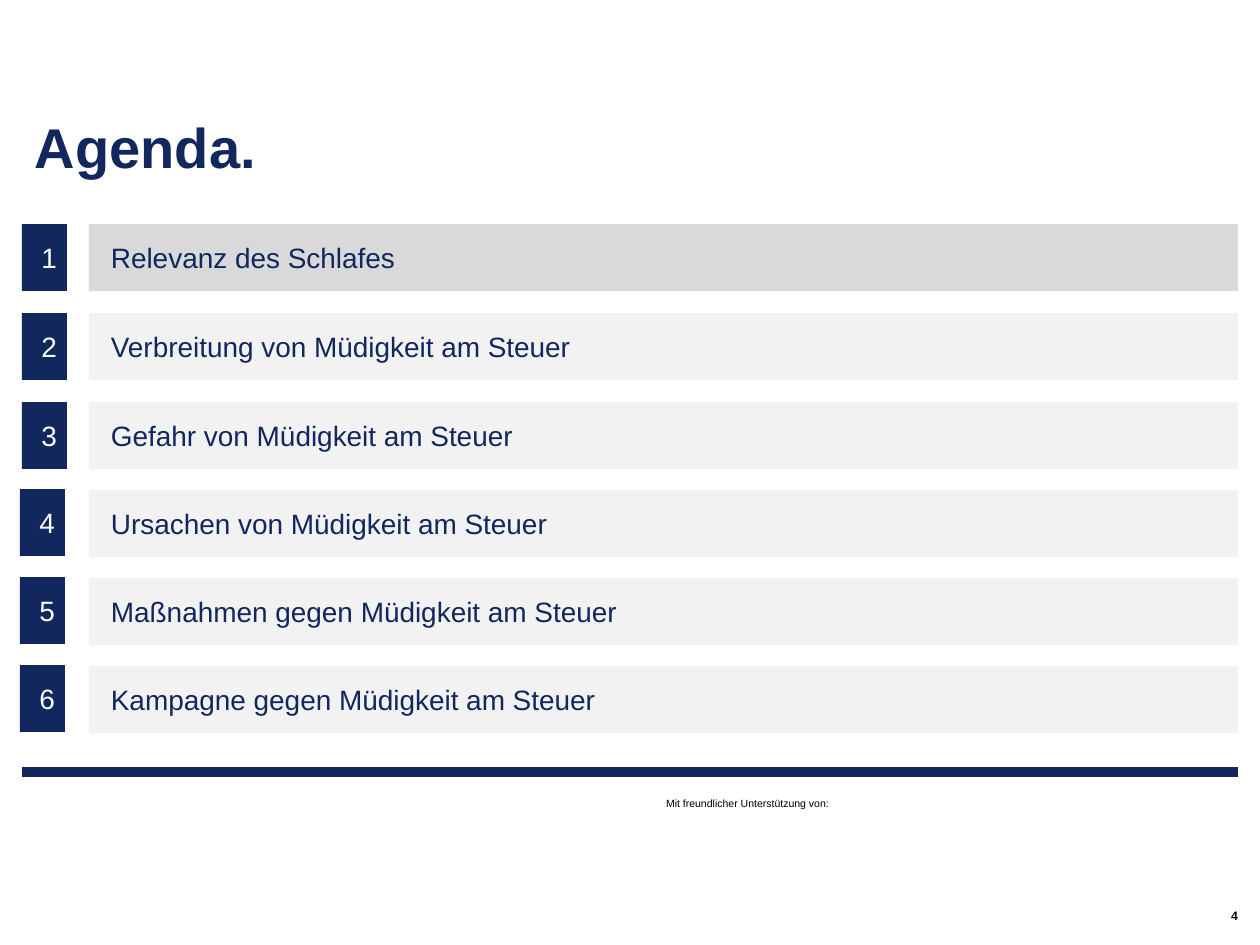
from pptx import Presentation
from pptx.dml.color import RGBColor
from pptx.enum.shapes import MSO_CONNECTOR, MSO_SHAPE
from pptx.enum.text import MSO_ANCHOR as Anchor, MSO_AUTO_SIZE as AutoSize, PP_ALIGN as Align
from pptx.oxml.ns import qn
from pptx.util import Pt
from lxml.etree import SubElement

COLORS = {"navy": "11275D", "white": "FFFFFF", "black": "000000",
          "active": "D9D9D9", "row": "F2F2F2"}
SCALE = 914400 / 126


def px(*lengths):
    return [round(length * SCALE) for length in lengths]


def write(shape, text, size=16, color="navy", bold=False, align=Align.LEFT,
          anchor=Anchor.MIDDLE, insets=(0, 0), wrap=True, after=0, line_spacing=1.0):
    frame = shape.text_frame
    frame.word_wrap = wrap
    frame.auto_size = AutoSize.NONE
    frame.vertical_anchor = anchor
    side, edge = px(*insets)
    frame.margin_left = frame.margin_right = side
    frame.margin_top = frame.margin_bottom = edge
    paragraph = frame.paragraphs[0]
    paragraph.text = text
    paragraph.alignment = align
    paragraph.space_before = Pt(0)
    paragraph.space_after = Pt(after)
    paragraph.line_spacing = line_spacing
    font = paragraph.runs[0].font
    font.name, font.size, font.bold = "Arial", Pt(size), bold
    font.color.rgb = RGBColor.from_string(COLORS[color])


presentation = Presentation()
presentation.slide_width, presentation.slide_height = px(1260, 945)
slide = presentation.slides.add_slide(presentation.slide_layouts[5])
shapes = slide.shapes

# Footer rule
rule = shapes.add_connector(MSO_CONNECTOR.STRAIGHT, *px(22, 772, 1238, 772))
rule.line.color.rgb = RGBColor.from_string(COLORS["navy"])
rule.line.width = Pt(5.67)
SubElement(rule._element.spPr, qn("a:effectLst"))

# Title
title = shapes.title
title.left, title.top, title.width, title.height = px(22, 49, 1216, 132)
write(title, "Agenda.", size=32, bold=True, anchor=Anchor.BOTTOM,
      insets=(13, 0), line_spacing=0.9)

# Agenda rows: number left, number top, bar top, topic
rows = [
    (22, 224, 224, "Relevanz des Schlafes"),
    (22, 313, 313, "Verbreitung von Müdigkeit am Steuer"),
    (22, 402, 402, "Gefahr von Müdigkeit am Steuer"),
    (20, 489, 490, "Ursachen von Müdigkeit am Steuer"),
    (20, 577, 578, "Maßnahmen gegen Müdigkeit am Steuer"),
    (20, 665, 666, "Kampagne gegen Müdigkeit am Steuer"),
]
for number, (number_left, number_top, bar_top, topic) in enumerate(rows, start=1):
    bar_fill = "active" if number == 1 else "row"
    for text, fill, box, style in (
        (str(number), "navy", (number_left, number_top, 45, 67),
         {"color": "white", "align": Align.RIGHT, "insets": (10, 6)}),
        (topic, bar_fill, (89, bar_top, 1149, 67), {"insets": (22, 6)}),
    ):
        shape = shapes.add_shape(MSO_SHAPE.RECTANGLE, *px(*box))
        shape.shadow.inherit = False
        shape.fill.solid()
        shape.fill.fore_color.rgb = RGBColor.from_string(COLORS[fill])
        shape.line.fill.background()
        write(shape, text, after=8, **style)

# Footer texts
credit = shapes.add_textbox(*px(653, 791, 256, 25))
write(credit, "Mit freundlicher Unterstützung von:", size=6, color="black",
      anchor=Anchor.TOP, insets=(13, 6))
page_number = shapes.add_textbox(*px(813, 906, 425, 20))
write(page_number, "4", size=7, color="black", bold=True, align=Align.RIGHT)

presentation.save("out.pptx")
